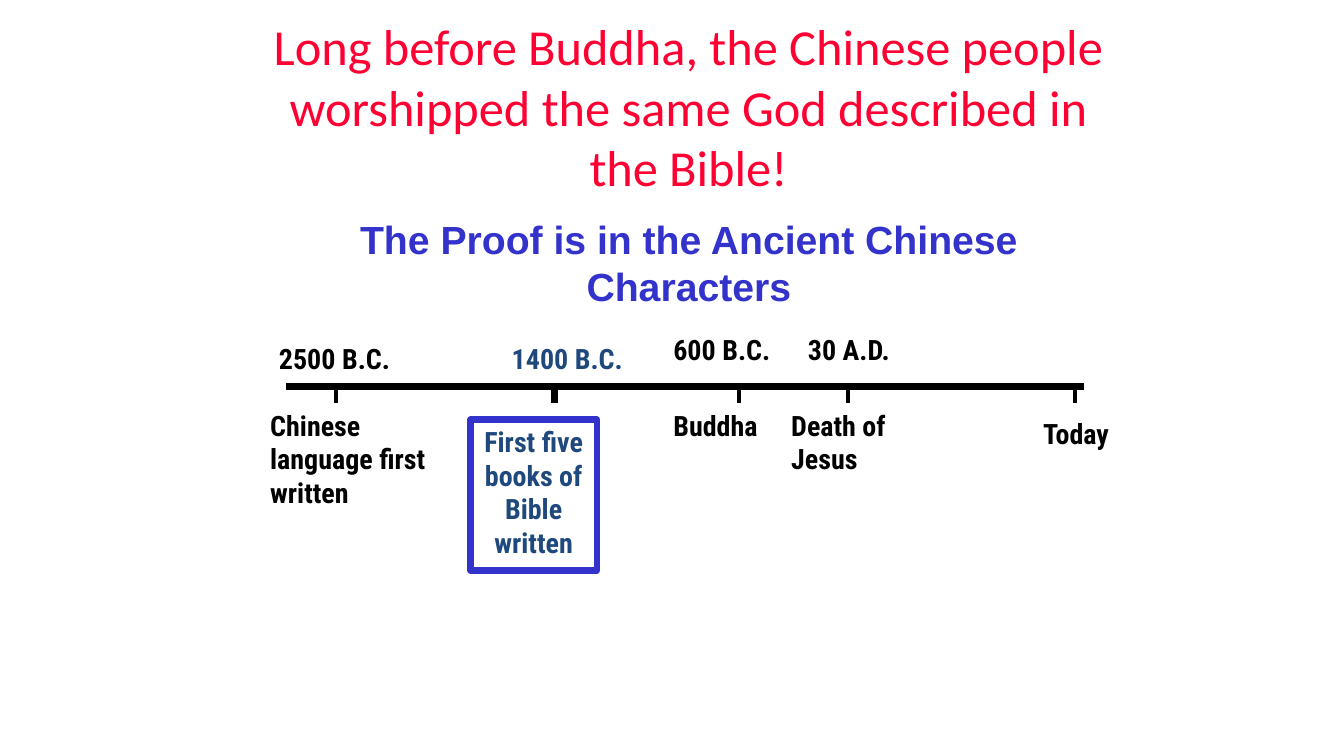
import pptx
import pptx.dml.color
import pptx.enum.shapes
import pptx.enum.text
import pptx.oxml
import pptx.oxml.ns
import pptx.util
from pptx.util import Cm

BLACK, BLUE, NAVY, RED = "000000", "3333CC", "1F497D", "FF0033"
LABEL_FONT = "Roboto Condensed"
AXIS_Y, TICK_END = 9.74, 10.16
ALIGN = pptx.enum.text.PP_ALIGN
NS = pptx.oxml.ns.nsdecls("a")
SHADOW = (f'<a:effectLst {NS}><a:outerShdw blurRad="38100" dist="38100" dir="2700000">'
          '<a:srgbClr val="000000"><a:alpha val="43000"/></a:srgbClr>'
          '</a:outerShdw></a:effectLst>')


def rgb(color):
    return pptx.dml.color.RGBColor.from_string(color)


def place(sp, left, top, width, height):
    sp.left, sp.top, sp.width, sp.height = Cm(left), Cm(top), Cm(width), Cm(height)


def write(sp, text, size, font, color, bold=True, align=ALIGN.LEFT, shadow=False):
    tf = sp.text_frame
    tf.word_wrap = True
    tf.text = text
    p = tf.paragraphs[0]
    p.alignment = align
    r = p.runs[0]
    r.font.size = pptx.util.Pt(size)
    r.font.bold = bold
    r.font.color.rgb = rgb(color)
    if shadow:
        r.font.fill._xPr.append(pptx.oxml.parse_xml(SHADOW))
    r.font.name = font


def add_text(s, box, text, size=20, font=LABEL_FONT, color=BLACK, **style):
    sp = s.shapes.add_textbox(*map(Cm, box))
    write(sp, text, size, font, color, **style)
    sp.text_frame.auto_size = pptx.enum.text.MSO_AUTO_SIZE.SHAPE_TO_FIT_TEXT


def add_line(s, x1, y1, x2, y2, weight):
    line = s.shapes.add_connector(pptx.enum.shapes.MSO_CONNECTOR.STRAIGHT,
                                  Cm(x1), Cm(y1), Cm(x2), Cm(y2))
    line.line.color.rgb = rgb(BLACK)
    line.line.width = pptx.util.Pt(weight)
    line._element.spPr.append(pptx.oxml.parse_xml(f"<a:effectLst {NS}/>"))


def add_framed_text(s, box, text):
    sp = s.shapes.add_shape(pptx.enum.shapes.MSO_SHAPE.RECTANGLE, *map(Cm, box))
    sp.shadow.inherit = False
    sp.fill.background()
    sp.line.color.rgb = rgb(BLUE)
    sp.line.width = pptx.util.Pt(4.5)
    write(sp, text, 20, LABEL_FONT, NAVY, align=ALIGN.CENTER)
    sp.text_frame.vertical_anchor = pptx.enum.text.MSO_ANCHOR.TOP


def main():
    prs = pptx.Presentation()
    prs.slide_width, prs.slide_height = Cm(33.87), Cm(19.05)
    s = prs.slides.add_slide(prs.slide_layouts[5])

    # Title and subtitle
    title = s.shapes.title
    place(title, 6.56, 0.42, 21.59, 4.5)
    write(title, "Long before Buddha, the Chinese people worshipped the same God "
          "described in the Bible!", 36, "Calibri", RED, bold=False,
          align=ALIGN.CENTER, shadow=True)
    title.text_frame.vertical_anchor = pptx.enum.text.MSO_ANCHOR.MIDDLE
    add_text(s, (7.2, 5.29, 20.32, 2.62), "The Proof is in the Ancient Chinese Characters",
             28, "Arial", BLUE, align=ALIGN.CENTER, shadow=True)

    # Timeline axis and its ticks
    add_line(s, 7.2, AXIS_Y, 27.31, AXIS_Y, 4.5)
    for x, weight in ((8.47, 3), (13.97, 4.5), (18.63, 3), (21.38, 3), (27.09, 3)):
        add_line(s, x, AXIS_Y, x, TICK_END, weight)

    # Dates above the axis
    for left, top, width, date in ((6.78, 8.47, 3.53, "2500 B.C."),
                                   (16.72, 8.26, 3.39, "600 B.C."),
                                   (20.11, 8.26, 2.96, "30 A.D.")):
        add_text(s, (left, top, width, 1.1), date)
    add_text(s, (12.5, 8.47, 3.6, 1.1), "1400 B.C.", color=NAVY, align=ALIGN.CENTER)

    # Events below the axis
    for left, top, width, height, event in (
            (6.56, 10.16, 5.08, 2.8, "Chinese language first written"),
            (16.72, 10.16, 2.96, 1.1, "Buddha"),
            (19.69, 10.16, 4.44, 1.95, "Death of Jesus"),
            (26.04, 10.37, 2.34, 1.1, "Today")):
        add_text(s, (left, top, width, height), event)
    add_framed_text(s, (11.86, 10.57, 3.18, 3.81), "First five books of Bible written")

    prs.save("out.pptx")


if __name__ == "__main__":
    main()
